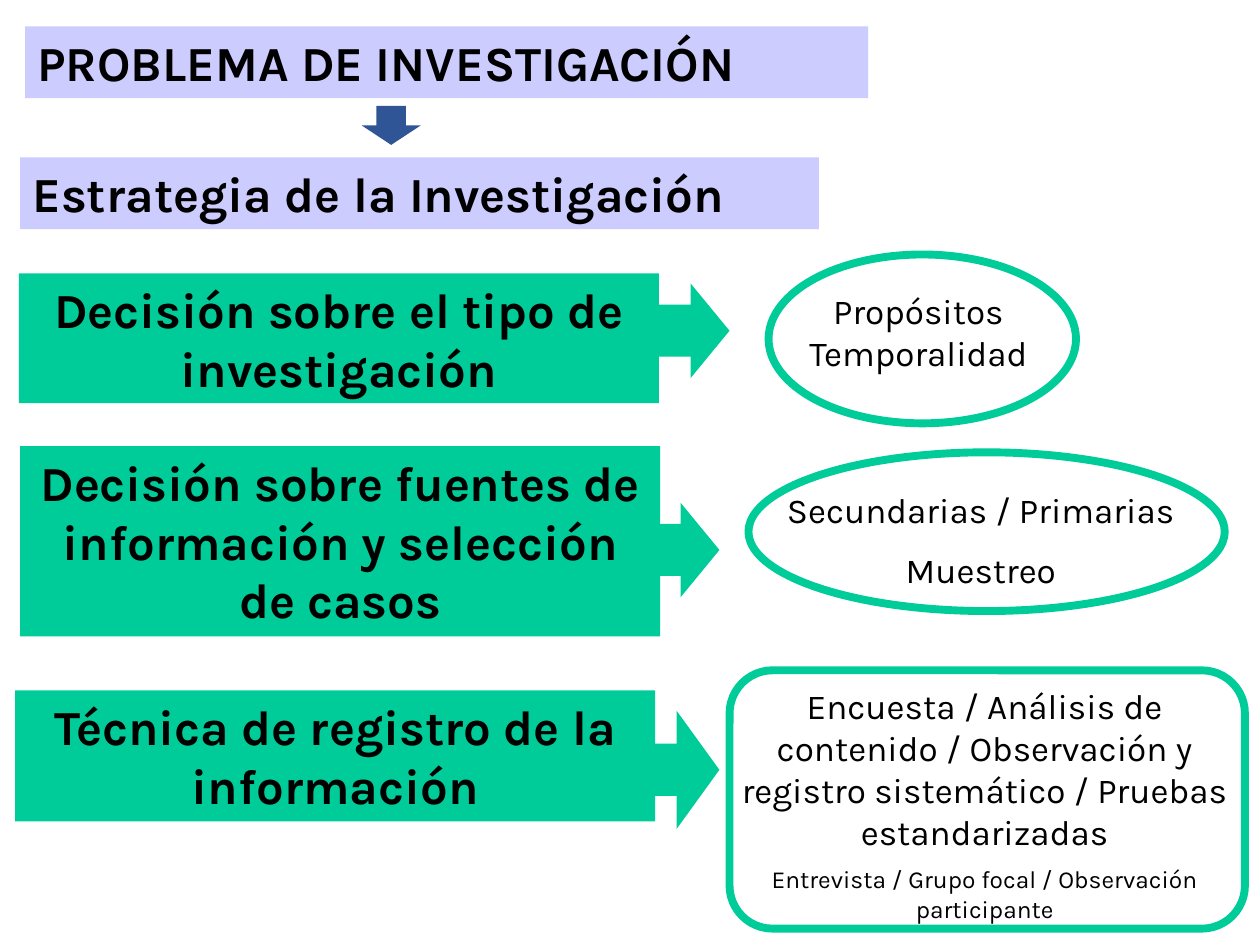
from pptx import Presentation
from pptx.dml.color import RGBColor
from pptx.enum.shapes import MSO_SHAPE as Shape
from pptx.enum.text import MSO_ANCHOR as Anchor, PP_ALIGN as Align
from pptx.util import Inches, Pt

LILAC, GREEN, BLUE, BLACK = "CCCCFF", "00CC99", "2F5597", "000000"


def add_figure(kind, place, fill=None, line=None, adjustments=()):
    figure = page.shapes.add_shape(kind, *map(Inches, place))
    figure.shadow.inherit = False
    for index, value in enumerate(adjustments):
        figure.adjustments[index] = value
    if fill:
        figure.fill.solid()
        figure.fill.fore_color.rgb = RGBColor.from_string(fill)
    else:
        figure.fill.background()
    if line:
        figure.line.color.rgb = RGBColor.from_string(line)
        figure.line.width = Pt(4.5)
    else:
        figure.line.fill.background()
    return figure


def write_text(box, lines, sizes, align, bold=False, spaced=True):
    frame = box.text_frame
    frame.word_wrap = True
    frame.vertical_anchor = Anchor.TOP
    frame.text = "\n".join(lines)
    for index, (para, size) in enumerate(zip(frame.paragraphs, sizes)):
        para.alignment = align
        if spaced and index:
            para.space_before = Pt(size / 2)
        for span in para.runs:
            span.font.name = "Karla"
            span.font.size = Pt(size)
            span.font.bold = bold
            span.font.color.rgb = RGBColor.from_string(BLACK)


deck = Presentation()
deck.slide_width, deck.slide_height = Inches(10), Inches(7.5)
page = deck.slides.add_slide(deck.slide_layouts[6])

banners = [
    ("PROBLEMA DE INVESTIGACIÓN", (0.2, 0.21, 6.69, 0.57), LILAC, Align.LEFT),
    ("Estrategia de la Investigación", (0.16, 1.25, 6.34, 0.57), LILAC, Align.LEFT),
    ("Decisión sobre el tipo de investigación", (0.15, 2.17, 5.08, 1.03), GREEN, Align.CENTER),
    ("Decisión sobre fuentes de información y selección de casos",
     (0.16, 3.54, 5.08, 1.51), GREEN, Align.CENTER),
    ("Técnica de registro de la información", (0.12, 5.48, 5.08, 1.04), GREEN, Align.CENTER),
]
for words, place, fill, align in banners:
    banner = add_figure(Shape.RECTANGLE, place, fill)
    write_text(banner, [words], [28], align, bold=True)

add_figure(Shape.DOWN_ARROW, (2.87, 0.84, 0.47, 0.31), BLUE)
arrows = [
    ((5.12, 2.25, 0.67, 0.75), (0.55, 0.46)),
    ((5.04, 3.99, 0.67, 0.75), (0.55, 0.46)),
    ((5.08, 5.64, 0.63, 0.94), (0.44, 0.54)),
]
for place, adjustments in arrows:
    add_figure(Shape.RIGHT_ARROW, place, GREEN, adjustments=adjustments)

outlines = [
    (Shape.OVAL, (6.1, 2.02, 2.44, 1.34)),
    (Shape.OVAL, (5.94, 3.59, 3.78, 1.26)),
    (Shape.ROUNDED_RECTANGLE, (5.79, 5.32, 4.09, 2.05)),
]
for kind, place in outlines:
    add_figure(kind, place, line=GREEN)

details = [
    (["Propósitos", "Temporalidad"], (5.08, 2.25, 4.42, 0.77), [20, 20], False),
    (["Secundarias / Primarias", "Muestreo"], (5.87, 3.83, 3.83, 0.94), [20, 20], True),
    (["Encuesta / Análisis de contenido / Observación y registro sistemático / "
      "Pruebas estandarizadas",
      "Entrevista / Grupo focal / Observación participante"],
     (5.67, 5.38, 4.29, 2.54), [20, 14], True),
]
for lines, place, sizes, spaced in details:
    box = page.shapes.add_textbox(*map(Inches, place))
    write_text(box, lines, sizes, Align.CENTER, spaced=spaced)

deck.save("out.pptx")
